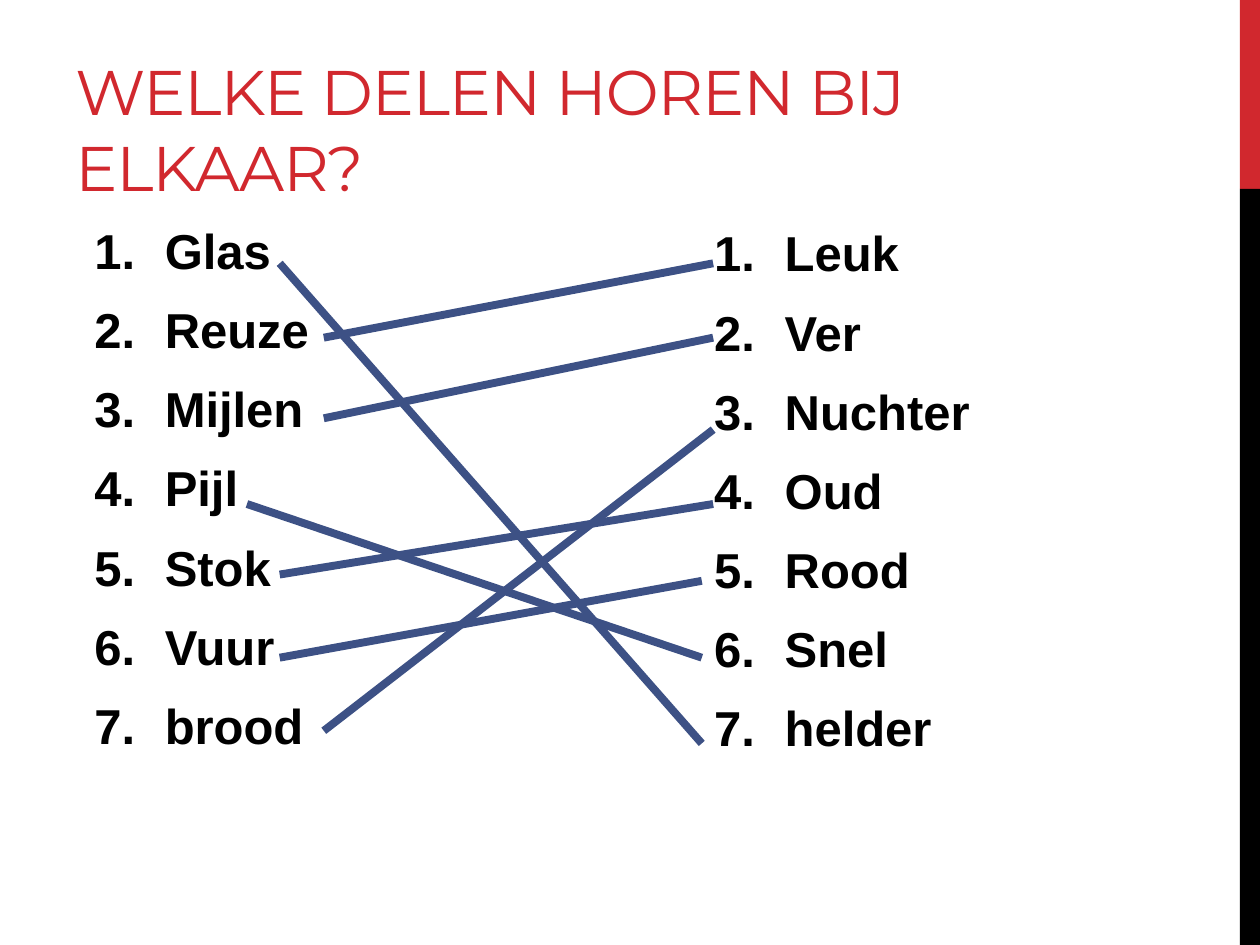
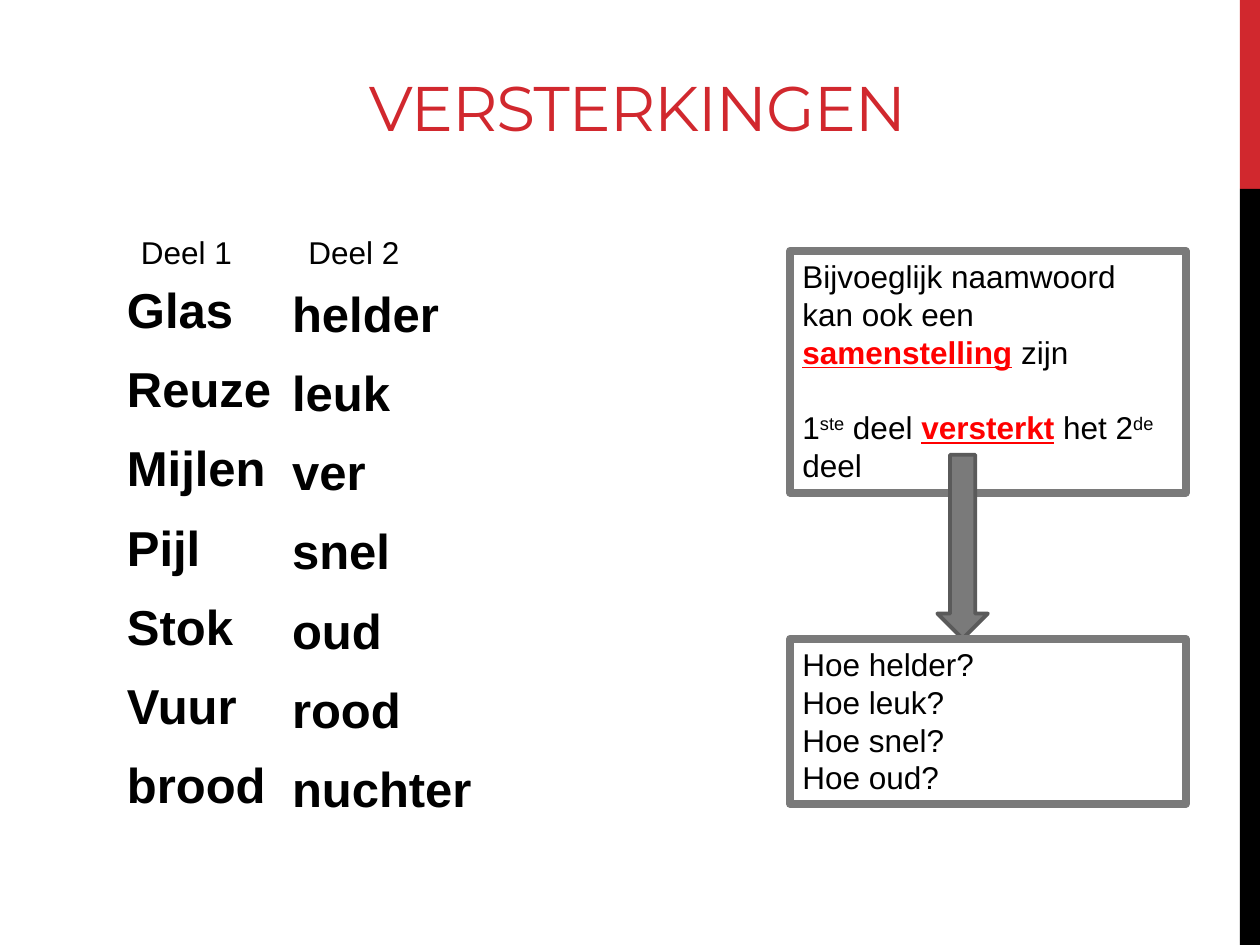
import pptx
import pptx.util
from lxml import etree
from pptx.dml.color import RGBColor
from pptx.enum.shapes import MSO_CONNECTOR, MSO_SHAPE
from pptx.enum.text import MSO_ANCHOR, PP_ALIGN
from pptx.oxml.ns import qn
from pptx.util import Inches

RED = RGBColor(0xD1, 0x28, 0x2E)
BLACK = RGBColor(0, 0, 0)
EMPHASIS_RED = RGBColor(0xFF, 0, 0)
LINE_BLUE = RGBColor(0x3D, 0x51, 0x85)
GREY = RGBColor(0x7A, 0x7A, 0x7A)
DARK_GREY = RGBColor(0x5A, 0x5A, 0x5A)

EMPHASIS = {"bold": True, "underline": True, "color": EMPHASIS_RED}
SUPERSCRIPT = {"baseline": 30000}

FIRST_PARTS = ["Glas", "Reuze", "Mijlen", "Pijl", "Stok", "Vuur", "brood"]
NUMBERED_SECOND_PARTS = ["Leuk", "Ver", "Nuchter", "Oud", "Rood", "Snel", "helder"]
MATCHING_SECOND_PARTS = ["helder", "leuk", "ver", "snel", "oud", "rood", "nuchter"]
# Start and end of each matching line, in inches on the slide
MATCHES = [
    ((2.22, 2.09), (5.57, 5.90)),
    ((2.57, 2.68), (5.66, 2.09)),
    ((2.57, 3.32), (5.66, 2.68)),
    ((1.96, 4.00), (5.57, 5.22)),
    ((2.22, 4.56), (5.66, 4.00)),
    ((2.57, 5.80), (5.66, 3.41)),
    ((2.22, 5.22), (5.57, 4.61)),
]
EXPLANATION = [
    ["Bijvoeglijk naamwoord kan ook een ", ("samenstelling", EMPHASIS), " zijn"],
    ["1", ("ste", SUPERSCRIPT), " deel ", ("versterkt", EMPHASIS), " het 2",
     ("de", SUPERSCRIPT), " deel"],
]
QUESTIONS = ["Hoe helder?", "Hoe leuk?", "Hoe snel?", "Hoe oud?"]


def add_run(paragraph, text, size=18, font="Arial", color=BLACK, bold=False,
            underline=False, baseline=None, tracking=None):
    run = paragraph.add_run()
    run.text = text
    run.font.size = pptx.util.Pt(size)
    run.font.name = font
    run.font.color.rgb = color
    run.font.bold = bold
    run.font.underline = underline
    properties = run.font._element
    if baseline is not None:
        properties.set("baseline", str(baseline))
    if tracking is not None:
        properties.set("spc", str(tracking))


def write_text(shape, paragraphs, anchor=MSO_ANCHOR.TOP, numbered=False,
               space_before=0, space_after=0, gap=0, **style):
    """Fill a shape; a paragraph is a string or a list of strings and (string, format) pairs.

    gap is the extra space, in points, between paragraphs.
    """
    frame = shape.text_frame
    frame.word_wrap = True
    frame.vertical_anchor = anchor
    for index, parts in enumerate(paragraphs):
        paragraph = frame.add_paragraph() if index else frame.paragraphs[0]
        paragraph.alignment = PP_ALIGN.LEFT
        paragraph.space_before = pptx.util.Pt(space_before + (gap if index else 0))
        paragraph.space_after = pptx.util.Pt(space_after)
        if numbered:
            properties = paragraph._p.get_or_add_pPr()
            properties.set("marL", str(Inches(0.56)))
            properties.set("indent", str(Inches(-0.56)))
            etree.SubElement(properties, qn("a:buFont"), typeface="+mj-lt")
            etree.SubElement(properties, qn("a:buAutoNum"), type="arabicPeriod")
        for part in [parts] if isinstance(parts, str) else parts:
            text, changes = (part, {}) if isinstance(part, str) else part
            add_run(paragraph, text, **{**style, **changes})


def add_text(slide, box, paragraphs, **options):
    shape = slide.shapes.add_textbox(*map(Inches, box))
    write_text(shape, paragraphs, **options)


def add_block(slide, box, kind=MSO_SHAPE.RECTANGLE, fill=None, line=None, width=0):
    shape = slide.shapes.add_shape(kind, *map(Inches, box))
    shape.shadow.inherit = False
    if fill is None:
        shape.fill.background()
    else:
        shape.fill.solid()
        shape.fill.fore_color.rgb = fill
    if line is None:
        shape.line.fill.background()
    else:
        shape.line.color.rgb = line
        shape.line.width = pptx.util.Pt(width)
    return shape


def add_base_slide(presentation, title, title_box):
    """Add a blank slide with the side band and its title."""
    slide = presentation.slides.add_slide(presentation.slide_layouts[6])
    add_block(slide, (9.84, 0, 0.16, 1.5), fill=RED)
    add_block(slide, (9.84, 1.5, 0.16, 6), fill=BLACK)
    add_text(slide, title_box, [title], anchor=MSO_ANCHOR.BOTTOM, size=36,
             font="Montserrat", color=RED, tracking=-60)
    return slide


def add_word_list(slide, left, top, words, numbered=False):
    add_text(slide, (left, top, 3.6, 4.95), words, numbered=numbered,
             space_before=5.6, space_after=6, size=28, bold=True)


def add_match_line(slide, start, end):
    connector = slide.shapes.add_connector(
        MSO_CONNECTOR.STRAIGHT, *map(Inches, start + end))
    connector.line.color.rgb = LINE_BLUE
    connector.line.width = pptx.util.Pt(4.5)
    etree.SubElement(connector._element.spPr, qn("a:effectLst"))


def add_framed_text(slide, box, paragraphs, gap=0):
    frame = add_block(slide, box, line=GREY, width=4.5)
    write_text(frame, paragraphs, gap=gap)


def build_matching_slide(presentation):
    slide = add_base_slide(presentation, "WELKE DELEN HOREN BIJ ELKAAR?",
                           (0.5, 0.17, 8.46, 1.5))
    add_word_list(slide, 0.65, 1.7, FIRST_PARTS, numbered=True)
    add_word_list(slide, 5.57, 1.72, NUMBERED_SECOND_PARTS, numbered=True)
    for start, end in MATCHES:
        add_match_line(slide, start, end)


def build_answer_slide(presentation):
    slide = add_base_slide(presentation, "VERSTERKINGEN", (2.83, 0.29, 5.06, 0.9))
    add_word_list(slide, 0.91, 2.17, FIRST_PARTS)
    add_word_list(slide, 2.22, 2.2, MATCHING_SECOND_PARTS)
    add_framed_text(slide, (6.27, 1.99, 3.14, 1.92), EXPLANATION, gap=21.6)
    for left, heading in ((1.02, "Deel 1"), (2.35, "Deel 2")):
        add_text(slide, (left, 1.8, 0.97, 0.4), [heading])
    add_block(slide, (7.44, 3.61, 0.4, 1.46), MSO_SHAPE.DOWN_ARROW,
              fill=GREY, line=DARK_GREY, width=2.25)
    add_framed_text(slide, (6.27, 5.07, 3.14, 1.31), QUESTIONS)


def main():
    presentation = pptx.Presentation()
    presentation.slide_width = Inches(10)
    presentation.slide_height = Inches(7.5)
    build_matching_slide(presentation)
    build_answer_slide(presentation)
    presentation.save("out.pptx")


if __name__ == "__main__":
    main()
